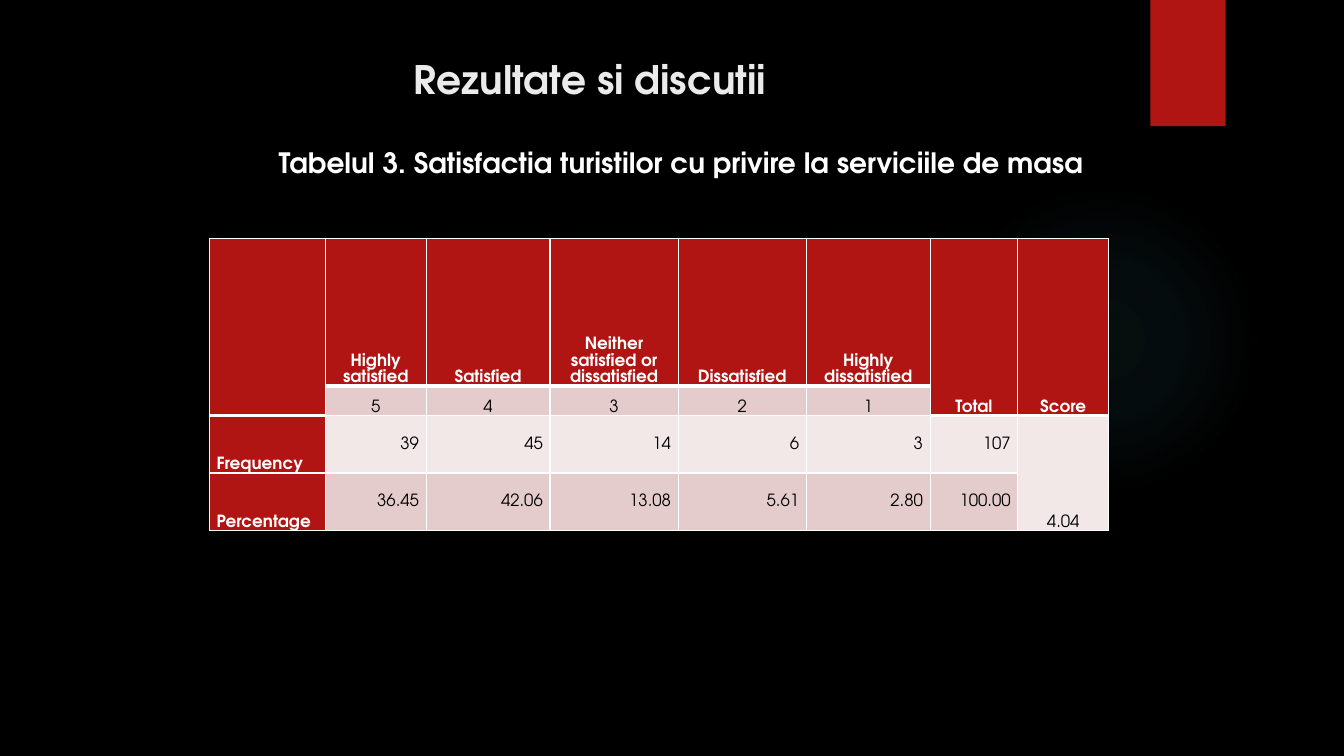
import pptx
import pptx.dml.color
import pptx.enum.dml
import pptx.enum.shapes
import pptx.enum.text
import pptx.oxml
import pptx.oxml.ns
import pptx.util
from lxml import etree

Cm = pptx.util.Cm
Pt = pptx.util.Pt
ALIGN = pptx.enum.text.PP_ALIGN
ANCHOR = pptx.enum.text.MSO_ANCHOR
SHAPE = pptx.enum.shapes.MSO_SHAPE
qn = pptx.oxml.ns.qn

COLORS = {
    "background": "000000", "red": "B01513", "glow": "50B9C1",
    "title": "EBEBEB", "white": "FFFFFF", "black": "000000",
    "pale": "F2E8E7", "pink": "E4CCCC",
}
COLUMN_WIDTHS = [2.92, 2.54, 3.12, 3.23, 3.23, 3.12, 2.21, 2.29]
ROW_HEIGHTS = [3.71, 0.74, 1.45, 1.45]
ROWS = [
    ["", "Highly satisfied", "Satisfied", "Neither satisfied or dissatisfied",
     "Dissatisfied", "Highly dissatisfied", "Total", "Score"],
    ["", "5", "4", "3", "2", "1", "", ""],
    ["Frequency", "39", "45", "14", "6", "3", "107", "4.04"],
    ["Percentage", "36.45", "42.06", "13.08", "5.61", "2.80", "100.00", ""],
]
ROW_FILLS = ["red", "pink", "pale", "pink"]
TALL_HEADERS = (0, 6, 7)
SCORE = 7


def color(name):
    return pptx.dml.color.RGBColor.from_string(COLORS[name])


def rule_width(row, column):
    """Points of the rule below a cell: thick where the header ends."""
    header_end = 1 if column in TALL_HEADERS else 0
    return 3 if row == header_end else 1


class SlideBuilder:
    font_name = "TeX Gyre Adventor"

    def __init__(self, presentation):
        self.slide = presentation.slides.add_slide(presentation.slide_layouts[6])
        self.slide.background.fill.solid()
        self.slide.background.fill.fore_color.rgb = color("background")

    def style(self, paragraph, size, color_name, bold, align):
        paragraph.alignment = align
        font = paragraph.font
        font.name, font.size, font.bold = self.font_name, Pt(size), bold
        font.color.rgb = color(color_name)

    def shape(self, kind, left, top, width, height, fill):
        shape = self.slide.shapes.add_shape(kind, Cm(left), Cm(top), Cm(width), Cm(height))
        shape.shadow.inherit = False
        shape.line.fill.background()
        shape.fill.solid()
        shape.fill.fore_color.rgb = color(fill)
        return shape

    def glow(self, left, top, diameter, stops):
        """Circle fading outwards; stops are (position, opacity) in percent."""
        shape = self.shape(SHAPE.OVAL, left, top, diameter, diameter, "glow")
        properties = shape.fill._xPr
        solid = properties.find(qn("a:solidFill"))
        gradient = etree.Element(qn("a:gradFill"), rotWithShape="1")
        stop_list = etree.SubElement(gradient, qn("a:gsLst"))
        for position, opacity in stops:
            stop = etree.SubElement(stop_list, qn("a:gs"), pos=str(position * 1000))
            tint = etree.SubElement(stop, qn("a:srgbClr"), val=COLORS["glow"])
            etree.SubElement(tint, qn("a:alpha"), val=str(opacity * 1000))
        circle = etree.SubElement(gradient, qn("a:path"))
        circle.set("path", "circle")
        etree.SubElement(circle, qn("a:fillToRect"), l="50000", t="50000", r="50000", b="50000")
        properties.replace(solid, gradient)

    def heading(self, text, left, top, width, height, size, color_name):
        box = self.slide.shapes.add_textbox(Cm(left), Cm(top), Cm(width), Cm(height))
        box.text_frame.word_wrap = True
        box.text_frame.text = text
        self.style(box.text_frame.paragraphs[0], size, color_name, True, ALIGN.CENTER)

    def borders(self, cell, top, bottom):
        properties = cell._tc.get_or_add_tcPr()
        for side, width in (("L", 1), ("R", 1), ("T", top), ("B", bottom)):
            line = etree.SubElement(properties, qn("a:ln" + side), w=str(Pt(width)))
            fill = etree.SubElement(line, qn("a:solidFill"))
            etree.SubElement(fill, qn("a:srgbClr"), val=COLORS["white"])

    def cell(self, cell, text, row, column):
        label = row == 0 or column == 0 or (row == 1 and column in TALL_HEADERS)
        number = row > 1 and 0 < column < SCORE
        self.borders(cell, rule_width(row - 1, column), rule_width(row, column))
        cell.fill.solid()
        fill = "red" if label else "pale" if column == SCORE else ROW_FILLS[row]
        cell.fill.fore_color.rgb = color(fill)
        cell.margin_left = cell.margin_right = Cm(0.18)
        cell.margin_top = cell.margin_bottom = 0
        cell.vertical_anchor = ANCHOR.MIDDLE if number else ANCHOR.BOTTOM
        cell.text = text
        align = ALIGN.RIGHT if number else ALIGN.CENTER
        if row > 1 and column == 0:
            align = ALIGN.LEFT
        paragraph = cell.text_frame.paragraphs[0]
        paragraph.line_spacing = 1.07
        self.style(paragraph, 12, "white" if label else "black", label, align)

    def table(self, left, top):
        frame = self.slide.shapes.add_table(
            len(ROWS), len(COLUMN_WIDTHS), Cm(left), Cm(top),
            Cm(sum(COLUMN_WIDTHS)), Cm(sum(ROW_HEIGHTS)))
        table = frame.table
        table.first_row = table.horz_banding = False
        for column, width in zip(table.columns, COLUMN_WIDTHS):
            column.width = Cm(width)
        for row, height in zip(table.rows, ROW_HEIGHTS):
            row.height = Cm(height)
        for row, texts in enumerate(ROWS):
            for column, text in enumerate(texts):
                self.cell(table.cell(row, column), text, row, column)
        for column in TALL_HEADERS:
            table.cell(0, column).merge(table.cell(1, column))
        table.cell(2, SCORE).merge(table.cell(3, SCORE))


def main():
    presentation = pptx.Presentation()
    presentation.slide_width = Cm(33.87)
    presentation.slide_height = Cm(19.05)
    builder = SlideBuilder(presentation)
    builder.glow(23.9, 4.65, 7.82, [(0, 7), (36, 6), (69, 0)])
    builder.shape(SHAPE.RECTANGLE, 28.99, 0, 1.9, 3.18, "red")
    builder.heading("Rezultate si discutii", 1.8, 1.27, 26.14, 1.78, 28, "title")
    builder.heading("Tabelul 3. Satisfactia turistilor cu privire la serviciile de masa",
                    2.74, 3.53, 28.85, 14.05, 20, "white")
    builder.table(5.28, 6.02)
    presentation.save("out.pptx")


if __name__ == "__main__":
    main()
